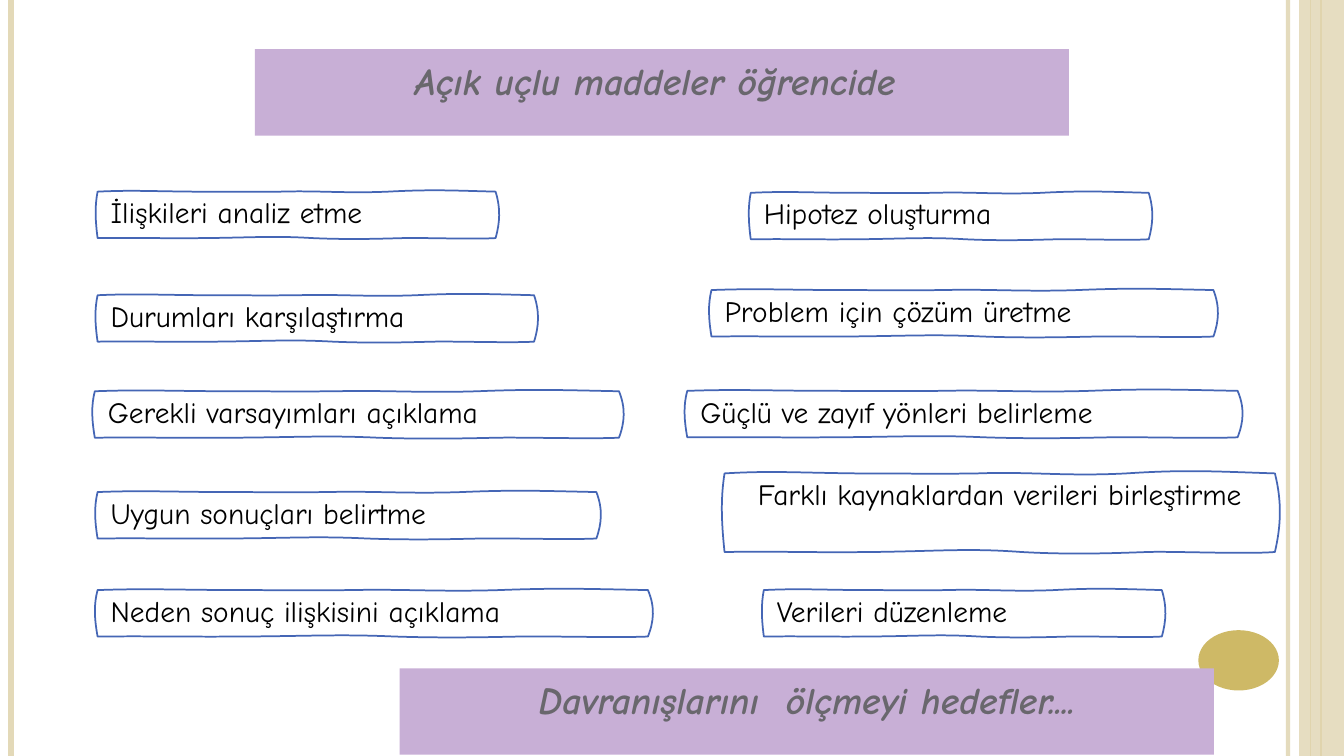
from dataclasses import dataclass

from lxml import etree
from pptx import Presentation
from pptx.dml.color import RGBColor
from pptx.enum.shapes import MSO_CONNECTOR, MSO_SHAPE
from pptx.enum.text import MSO_ANCHOR, MSO_AUTO_SIZE, PP_ALIGN
from pptx.oxml.ns import qn
from pptx.util import Cm, Pt

RECT, OVAL = MSO_SHAPE.RECTANGLE, MSO_SHAPE.OVAL
STRAIGHT = MSO_CONNECTOR.STRAIGHT
LEFT, MID = PP_ALIGN.LEFT, PP_ALIGN.CENTER
TOP, FIXED = MSO_ANCHOR.TOP, MSO_AUTO_SIZE.NONE


@dataclass(frozen=True)
class Theme:
    font: str = "Comic Neue"
    band: str = "C8AFD6"
    head: str = "69676D"
    ink: str = "000000"
    edge: str = "375BB0"
    gold: str = "CEB966"
    pale: str = "E3D9B8"
    big: float = 27
    small: float = 21
    rim: float = 1.25


THEME = Theme()
WIDE, HIGH = 33.87, 19.05
TITLE = ("Açık uçlu maddeler öğrencide ", 6.42, 1.24)
CLOSE = ("Davranışlarını  ölçmeyi hedefler....", 10.07, 16.84)
BAND = (20.52, 2.18)
LOW, TALL = 1.17, 1.98
SIDE, THIN = 0.33, 0.17

SKILLS = [
    ("İlişkileri analiz etme", 2.46, 4.83, 10.03, LOW, LEFT),
    ("Durumları karşılaştırma", 2.46, 7.44, 11, LOW, LEFT),
    ("Gerekli varsayımları açıklama", 2.39, 9.86, 13.21, LOW, LEFT),
    ("Uygun sonuçları belirtme", 2.46, 12.4, 12.57, LOW, LEFT),
    ("Neden sonuç ilişkisini açıklama", 2.46, 14.87, 13.87, LOW, LEFT),
    ("Hipotez oluşturma", 18.92, 4.86, 10.03, LOW, LEFT),
    ("Problem için çözüm üretme", 17.93, 7.31, 12.65, LOW, LEFT),
    ("Güçlü ve zayıf yönleri belirleme", 17.32, 9.85, 13.87, LOW, LEFT),
    ("Farklı kaynaklardan verileri birleştirme", 18.26, 11.93, 13.87, TALL, MID),
    ("Verileri düzenleme", 19.25, 14.87, 10.03, LOW, LEFT),
]

STRIPES = [
    (32.46, THEME.pale, 3, 93),
    (0.28, THEME.pale, 4.5, 100),
    (33.3, THEME.gold, 1.5, 100),
    (33.02, THEME.gold, 0.75, 100),
]

WAVES = [
    ((8.4, -3.5), (12.6, -1), (24, 0)),
    ((35.2, 0), (36.3, 1), (46, 0)),
    ((55.5, -2.5), (62.1, 4), (73, 0)),
    ((83.8, -5), (89.2, -2.5), (100, 0)),
    ((101.3, 36), (101.1, 67), (100, 100)),
    ((94.9, 103), (81.7, 99), (77, 100)),
    ((72.5, 101), (63.7, 104), (53.9, 100)),
    ((44.2, 95), (38.9, 99), (27, 100)),
    ((15, 101), (11.4, 99), (0, 100)),
    ((-0.6, 60), (-0.7, 31), (0, 0)),
]


def paint(fill, tone, alpha=100):
    fill.solid()
    fill.fore_color.rgb = RGBColor.from_string(tone)
    if alpha < 100:
        clr = next(fill._xPr.iter(qn("a:srgbClr")))
        etree.SubElement(clr, qn("a:alpha"), val=str(alpha * 1000))


def write(shape, text, size, tone, align, inset, bold=False):
    frame = shape.text_frame
    frame.text = text
    frame.word_wrap = True
    frame.auto_size = FIXED
    frame.vertical_anchor = TOP
    frame.margin_left = frame.margin_right = Cm(SIDE)
    frame.margin_top = frame.margin_bottom = Cm(inset)
    para = frame.paragraphs[0]
    para.alignment = align
    para.line_spacing = 0.9
    font = para.runs[0].font
    font.name, font.size = THEME.font, Pt(size)
    font.bold = font.italic = bold
    font.color.rgb = RGBColor.from_string(tone)


def plain(slide, kind, box, tone, alpha=100):
    shape = slide.shapes.add_shape(kind, *map(Cm, box))
    shape.shadow.inherit = False
    paint(shape.fill, tone, alpha)
    shape.line.fill.background()
    return shape


def stripe(slide, left, tone, width, alpha):
    line = slide.shapes.add_connector(
        STRAIGHT, Cm(left), 0, Cm(left), Cm(HIGH))
    line.line.width = Pt(width)
    paint(line.line.fill, tone, alpha)
    etree.SubElement(line._element.spPr, qn("a:effectLst"))


def bend(shape):
    sides = list(shape._element.iter(qn("a:lnTo")))
    for side, wave in zip(sides, WAVES):
        curve = etree.Element(qn("a:cubicBezTo"))
        for x, y in wave:
            etree.SubElement(curve, qn("a:pt"),
                             x=str(round(shape.width * x / 100)),
                             y=str(round(shape.height * y / 100)))
        side.getparent().replace(side, curve)


def skill(slide, text, left, top, width, height, align):
    ends = [(Cm(left + width * x / 100), Cm(top + height * y / 100))
            for _, _, (x, y) in WAVES]
    form = slide.shapes.build_freeform(Cm(left), Cm(top))
    form.add_line_segments(ends, close=True)
    shape = form.convert_to_shape()
    bend(shape)
    shape.shadow.inherit = False
    shape.fill.background()
    paint(shape.line.fill, THEME.edge, 93)
    shape.line.width = Pt(THEME.rim)
    write(shape, text, THEME.small, THEME.ink, align, THIN)


def main():
    """Build the slide on what open-ended items measure."""
    deck = Presentation()
    deck.slide_width, deck.slide_height = Cm(WIDE), Cm(HIGH)
    slide = deck.slides.add_slide(deck.slide_layouts[5])
    for row in STRIPES:
        stripe(slide, *row)
    plain(slide, RECT, (32.74, 0, 1.13, HIGH), THEME.pale, 87)
    plain(slide, OVAL, (30.2, 15.88, 2.03, 1.52), THEME.gold)

    title = slide.shapes.title
    text, left, top = TITLE
    title.left, title.top, title.width, title.height = map(
        Cm, (left, top, *BAND))
    paint(title.fill, THEME.band)
    write(title, text, THEME.big, THEME.head, MID, SIDE, True)

    for row in SKILLS:
        skill(slide, *row)

    text, left, top = CLOSE
    close = plain(slide, RECT, (left, top, *BAND), THEME.band)
    write(close, text, THEME.big, THEME.head, MID, SIDE, True)
    deck.save("out.pptx")


if __name__ == "__main__":
    main()
